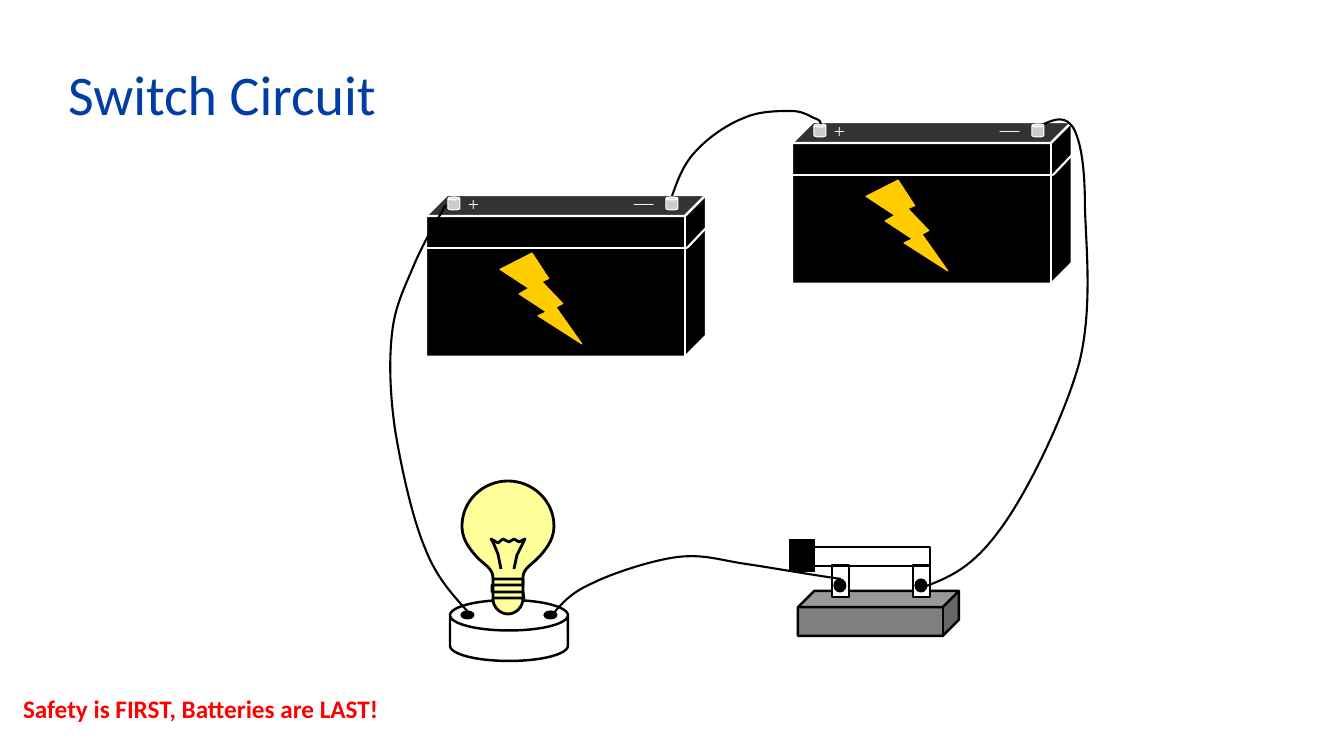
import lxml.etree
import pptx
import pptx.dml.color
import pptx.enum.shapes
import pptx.enum.text
import pptx.oxml.ns
import pptx.util

PX = 12192000 / 1344  # EMU in one px
KIND = pptx.enum.shapes.MSO_SHAPE
INK = {"blue": "003DA5", "red": "FF0000", "black": "000000", "white": "FFFFFF",
       "gold": "FFCC00", "pale": "CCCCCC", "gray": "808080", "glow": "FFFF99"}


def emu(n):
    return round(n * PX)


def tint(name):
    return pptx.dml.color.RGBColor.from_string(INK[name])


def style(item, fill, line, width):
    item.shadow.inherit = False
    if fill:
        item.fill.solid()
        item.fill.fore_color.rgb = tint(fill)
    else:
        item.fill.background()
    item.line.color.rgb = tint(line)
    item.line.width = pptx.util.Pt(width)


def part(group, kind, org, box, fill=None, line="black", width=1.75, adj=None):
    """Preset shape, placed relative to the corner org."""
    x, y, w, h = box
    item = group.shapes.add_shape(
        kind, emu(org[0] + x), emu(org[1] + y), emu(w), emu(h))
    style(item, fill, line, width)
    if adj is not None:
        item.adjustments[0] = adj


def rule(group, org, start, end):
    """Straight white line, placed relative to org."""
    item = group.shapes.add_connector(
        pptx.enum.shapes.MSO_CONNECTOR.STRAIGHT,
        emu(org[0] + start[0]), emu(org[1] + start[1]),
        emu(org[0] + end[0]), emu(org[1] + end[1]))
    item.line.color.rgb = tint("white")
    item.line.width = pptx.util.Pt(1.5)
    lxml.etree.SubElement(item._element.spPr, pptx.oxml.ns.qn("a:effectLst"))


def trace(group, org, dots, fill=None, width=1.5, bend=False, close=False):
    """Freeform; with bend, every three dots after the first make a Bezier."""
    build = group.shapes.build_freeform(*dots[0], scale=PX)
    build.add_line_segments(dots[1:], close=close)
    item = build.convert_to_shape(emu(org[0]), emu(org[1]))
    style(item, fill, "black", width)
    if bend:
        name = pptx.oxml.ns.qn
        steps = list(item._element.iter(name("a:lnTo")))
        for i in range(0, len(steps), 3):
            curve = lxml.etree.Element(name("a:cubicBezTo"))
            steps[i].addprevious(curve)
            for step in steps[i:i + 3]:
                curve.append(step[0])
                step.getparent().remove(step)


def write(item, text, size, color, font="Calibri", bold=False, inset=10,
          anchor="TOP", space=None):
    frame = item.text_frame
    frame.word_wrap = True
    frame.auto_size = pptx.enum.text.MSO_AUTO_SIZE.NONE
    frame.vertical_anchor = pptx.enum.text.MSO_ANCHOR[anchor]
    frame.margin_left = frame.margin_right = emu(inset)
    frame.margin_top = frame.margin_bottom = emu(min(inset, 5))
    line = frame.paragraphs[0]
    line.alignment = pptx.enum.text.PP_ALIGN.LEFT
    if space:
        line.line_spacing = space
    run = line.add_run()
    run.text = text
    run.font.name = font
    run.font.size = pptx.util.Pt(size)
    run.font.bold = bold
    run.font.color.rgb = tint(color)


def label(group, org, box, text, size, color, **form):
    x, y, w, h = box
    item = group.shapes.add_textbox(
        emu(org[0] + x), emu(org[1] + y), emu(w), emu(h))
    write(item, text, size, color, **form)


def title(slide, box, text):
    item = slide.shapes.title
    item.left, item.top, item.width, item.height = map(emu, box)
    write(item, text, 40, "blue", anchor="MIDDLE", space=0.9)


def cell(slide, box):
    """Battery"""
    x, y, w, h = box
    org = x, y
    group = slide.shapes.add_group_shape()
    part(group, KIND.CUBE, org, (0, 0, w, h), "black", "white", adj=0.13)
    # Lid seam
    rule(group, org, (0, 53), (w - 19, 53))
    rule(group, org, (w - 19, 53), (w, 33))
    # Poles and their signs
    for left, sign in ((38, "+"), (204, "—")):
        label(group, org, (left, -9 if left > 38 else -7, 38, 44), sign, 14,
              "white", font="Times New Roman", inset=4)
    part(group, KIND.LIGHTNING_BOLT, org, (74, 58, 82, 91), "gold", "gold", 0.75)
    for left in (22, w - 40):
        part(group, KIND.CAN, org, (left, 2, 12, 13), "pale", "white", 0.75, 0.25)


def bulb(slide, box):
    """Lamp in its socket"""
    x, y, w, h = box
    org = x, y
    group = slide.shapes.add_group_shape()
    part(group, KIND.CAN, org, (0, h - 61, w, 61), adj=0.5)
    # Glass: the right half, then its mirror
    half = [(58, 133), (66, 133), (73, 126), (73, 118), (73, 111), (73, 104),
            (73, 97), (73, 87), (82, 84), (90, 75), (99, 65), (104, 56),
            (104, 45), (104, 20), (83, 0), (58, 0)]
    other = [(116 - a, b) for a, b in reversed(half[:-1])]
    trace(group, org, half + other, "glow", 2, bend=True, close=True)
    # Filament and screw thread
    trace(group, org, [(51, 88), (48, 73), (43, 61), (41, 58), (48, 62), (53, 58),
                       (59, 61), (64, 58), (69, 61), (75, 58), (67, 74),
                       (64, 88)], width=2)
    trace(group, org, [(42, 98), (73, 98), (73, 104), (42, 104), (42, 111),
                       (73, 111), (74, 117), (43, 117)], width=2)
    for left in (11, 94):
        part(group, KIND.OVAL, org, (left, 130, 13, 8), "black", width=0.75)


def switch(slide, box):
    """Knife switch, closed"""
    x, y, w, h = box
    org = x, y
    group = slide.shapes.add_group_shape()
    part(group, KIND.CUBE, org, (0, 0, w, h), "gray", adj=0.36)
    posts = 34, 115
    for left in posts:
        part(group, KIND.RECTANGLE, org, (left, -26, 17, 32), "white")
    # Arm and handle
    part(group, KIND.RECTANGLE, org, (14, -44, 118, 19))
    part(group, KIND.RECTANGLE, org, (-8, -51, 25, 32), "black", width=0.75)
    for left in posts:
        part(group, KIND.OVAL, org, (left + 2, -12, 12, 13), "black", width=0.75)


WIRES = [
    # Battery to battery
    [(672, 196), (678, 179), (684, 163), (697, 150), (709, 137), (728, 124),
     (744, 118), (759, 111), (779, 111), (791, 111), (803, 111), (809, 116),
     (814, 118), (820, 120), (821, 122), (821, 124)],
    # Left battery to bulb
    [(446, 205), (434, 225), (423, 244), (414, 265), (405, 287), (395, 305),
     (392, 334), (389, 361), (390, 394), (395, 429), (401, 466), (412, 517),
     (425, 548), (437, 579), (454, 596), (469, 613)],
    # Bulb to switch
    [(553, 614), (562, 603), (572, 592), (593, 583), (613, 573), (653, 560),
     (678, 557), (704, 554), (719, 560), (746, 564), (773, 568), (806, 574),
     (841, 579)],
    # Right battery to switch
    [(1044, 124), (1055, 119), (1066, 115), (1074, 129), (1081, 143),
     (1085, 167), (1085, 207), (1086, 246), (1093, 309), (1079, 364),
     (1064, 417), (1027, 494), (999, 531), (971, 569), (948, 578), (921, 588)],
]


def main():
    deck = pptx.Presentation()
    deck.slide_width, deck.slide_height = emu(1344), emu(756)
    slide = deck.slides.add_slide(deck.slide_layouts[5])
    title(slide, (58, 59, 1196, 77), "Switch Circuit")
    label(slide, (0, 0), (13, 688, 824, 40),
          "Safety is FIRST, Batteries are LAST!", 18, "red", bold=True)
    for x, y in ((426, 195), (792, 122)):
        cell(slide, (x, y, 280, 162))
    bulb(slide, (450, 481, 118, 180))
    switch(slide, (798, 591, 161, 45))
    for wire in WIRES:
        trace(slide, (0, 0), wire, bend=True)
    deck.save("out.pptx")


if __name__ == "__main__":
    main()
